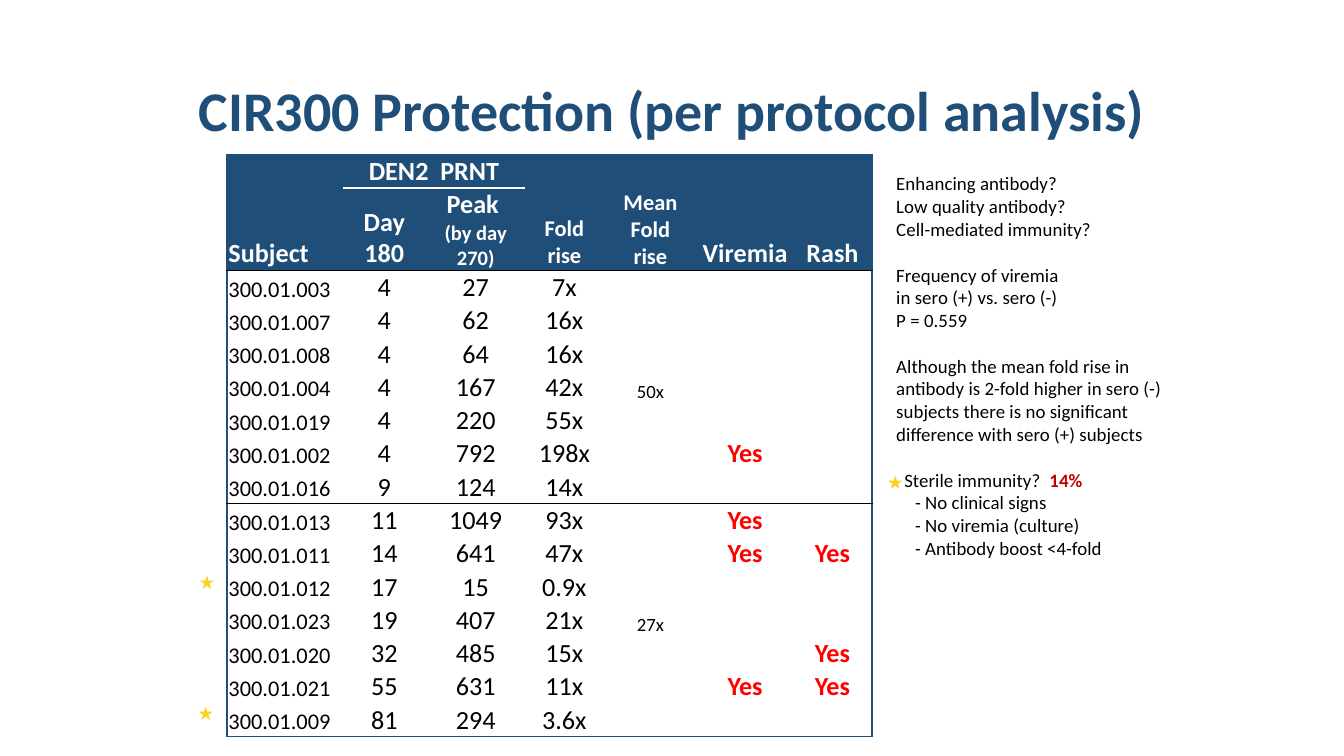
"""Build the CIR300 protection slide with its per-subject results table."""
import pptx
import pptx.dml.color
import pptx.enum.text
import pptx.oxml
import pptx.oxml.ns
import pptx.util
from lxml import etree

Inches = pptx.util.Inches
Pt = pptx.util.Pt
qn = pptx.oxml.ns.qn
Align = pptx.enum.text.PP_ALIGN
Anchor = pptx.enum.text.MSO_ANCHOR


class Theme:
    navy, black, white = "1F4E79", "000000", "FFFFFF"
    alert, share, star = "FF0000", "C00000", "F9D425"
    body_font, star_font = "Calibri", "Arial"
    title, cell, subject, detail, mean, note = 30, 14, 12, 11, 10, 10.13


def write(frame, text, size, color=Theme.black, bold=False, font=Theme.body_font,
          align=Align.LEFT, before=0, indent=0, spacing=None, same_line=False):
    paragraph = frame.paragraphs[-1]
    if paragraph.runs and not same_line:
        paragraph = frame.add_paragraph()
    if not same_line:
        paragraph.alignment = align
        paragraph.space_before = Pt(before)
        paragraph.line_spacing = spacing
        paragraph._p.get_or_add_pPr().set("marL", str(Inches(indent)))
    if not text:
        etree.SubElement(paragraph._p, qn("a:endParaRPr"), sz=str(size * 100))
        return
    run = paragraph.add_run()
    run.text = text
    run.font.size, run.font.bold, run.font.name = Pt(size), bold, font
    run.font.color.rgb = pptx.dml.color.RGBColor.from_string(color)


def draw_border(cell, side, color):
    line = etree.SubElement(cell._tc.get_or_add_tcPr(), qn(f"a:ln{side}"), w=str(Pt(1)))
    fill = etree.SubElement(line, qn("a:solidFill" if color else "a:noFill"))
    if color:
        etree.SubElement(fill, qn("a:srgbClr"), val=color)


presentation = pptx.Presentation()
presentation.slide_width = Inches(10)
presentation.slide_height = presentation.slide_width * 9 // 16
slide = presentation.slides.add_slide(presentation.slide_layouts[6])

title = slide.shapes.add_textbox(Inches(0.69), Inches(0.3), Inches(8.62), Inches(1.09)).text_frame
title.word_wrap = True
title.vertical_anchor = Anchor.MIDDLE
write(title, "CIR300 Protection (per protocol analysis)", Theme.title, Theme.navy, True,
      align=Align.CENTER, spacing=0.9)

headings = [
    [("Subject", Theme.cell)],
    [("Day 180", Theme.cell)],
    [("Peak ", Theme.cell), ("(by day 270)", Theme.detail)],
    [("Fold", Theme.subject), ("rise", Theme.subject)],
    [("Mean", Theme.subject), ("Fold", Theme.subject), ("rise", Theme.subject)],
    [("Viremia", Theme.cell)],
    [("Rash", Theme.cell)],
]
subjects = [
    ("300.01.003", "4", "27", "7x", "", "", ""),
    ("300.01.007", "4", "62", "16x", "", "", ""),
    ("300.01.008", "4", "64", "16x", "", "", ""),
    ("300.01.004", "4", "167", "42x", "50x", "", ""),
    ("300.01.019", "4", "220", "55x", "", "", ""),
    ("300.01.002", "4", "792", "198x", "", "Yes", ""),
    ("300.01.016", "9", "124", "14x", "", "", ""),
    ("300.01.013", "11", "1049", "93x", "", "Yes", ""),
    ("300.01.011", "14", "641", "47x", "", "Yes", "Yes"),
    ("300.01.012", "17", "15", "0.9x", "", "", ""),
    ("300.01.023", "19", "407", "21x", "27x", "", ""),
    ("300.01.020", "32", "485", "15x", "", "", "Yes"),
    ("300.01.021", "55", "631", "11x", "", "Yes", "Yes"),
    ("300.01.009", "81", "294", "3.6x", "", "", ""),
]
column_widths = [0.86, 0.62, 0.74, 0.58, 0.7, 0.71, 0.59]
table_height, heading_height = 4.27, 0.61
line_height = (table_height - heading_height) / (len(subjects) + 1)
row_heights = [line_height, heading_height] + [line_height] * len(subjects)
last_row, last_column = len(row_heights) - 1, len(column_widths) - 1
rules = {0: Theme.navy, 2: Theme.black, 9: Theme.black, last_row + 1: Theme.navy}
column_sizes = {0: Theme.subject, 4: Theme.mean}

results = slide.shapes.add_table(len(row_heights), len(column_widths), Inches(1.69), Inches(1.15),
                                 Inches(sum(column_widths)), Inches(table_height)).table
results._tbl.tblPr.find(qn("a:tableStyleId")).text = "{2D5ABB26-0587-4C30-8999-92F81FD0307C}"
results.first_row = results.horz_banding = False
for column, width in zip(results.columns, column_widths):
    column.width = Inches(width)
for row, height in zip(results.rows, row_heights):
    row.height = Inches(height)
results.cell(0, 1).merge(results.cell(0, 2))

for r in range(last_row + 1):
    for c in range(last_column + 1):
        cell = results.cell(r, c)
        cell.margin_left = cell.margin_right = cell.margin_top = Inches(0.01)
        cell.margin_bottom = Pt(0.3)
        cell.vertical_anchor = Anchor.BOTTOM
        draw_border(cell, "L", Theme.navy if c == 0 else None)
        draw_border(cell, "R", Theme.navy if c == last_column else None)
        for side, edge in (("T", r), ("B", r + 1)):
            draw_border(cell, side, Theme.white if edge == 1 and c in (1, 2) else rules.get(edge))
        align = Align.LEFT if c == 0 else Align.CENTER
        if r < 2:
            cell.fill.solid()
            cell.fill.fore_color.rgb = pptx.dml.color.RGBColor.from_string(Theme.navy)
            group = [("DEN2  PRNT" if c == 1 else "", Theme.cell)]
            for text, size in headings[c] if r else group:
                write(cell.text_frame, text, size, Theme.white, True, align=align)
        else:
            cell.fill.background()
            text = subjects[r - 2][c]
            positive = text == "Yes"
            write(cell.text_frame, text, column_sizes.get(c, Theme.cell),
                  Theme.alert if positive else Theme.black, positive, align=align)

notes = slide.shapes.add_textbox(Inches(6.57), Inches(1.23), Inches(2.22), Inches(3)).text_frame
notes.word_wrap = True
remarks = [
    ["Enhancing antibody?", "Low quality antibody?", "Cell-mediated immunity?"],
    ["Frequency of viremia", "in sero (+) vs. sero (-)", "P = 0.559"],
    ["Although the mean fold rise in antibody is 2-fold higher in sero (-) subjects "
     "there is no significant difference with sero (+) subjects"],
]
line_gap = 12.3
for g, remark in enumerate(remarks):
    for i, text in enumerate(remark):
        write(notes, text, Theme.note, before=line_gap if g and not i else 0)
write(notes, "Sterile immunity?  ", Theme.note, before=line_gap, indent=0.06)
write(notes, "14%", Theme.note, Theme.share, True, same_line=True)
for criterion in ("- No clinical signs", "- No viremia (culture)", "- Antibody boost <4-fold"):
    write(notes, criterion, Theme.note, indent=0.14)

for left, top in ((1.38, 4.2), (1.37, 5.17), (6.5, 3.45)):
    star = slide.shapes.add_textbox(Inches(left), Inches(top), Inches(0.31), Inches(0.27)).text_frame
    star.word_wrap = True
    write(star, "★", Theme.note, Theme.star, font=Theme.star_font)

presentation.save("out.pptx")
